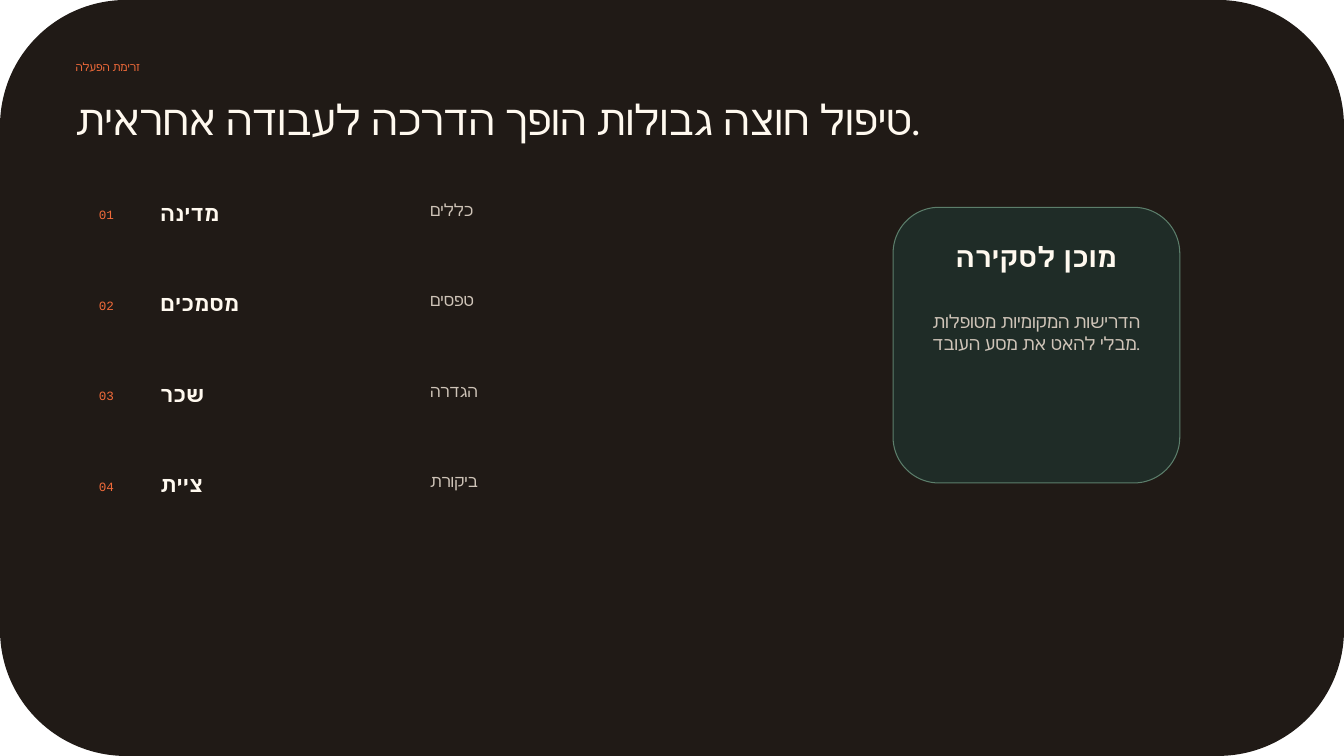
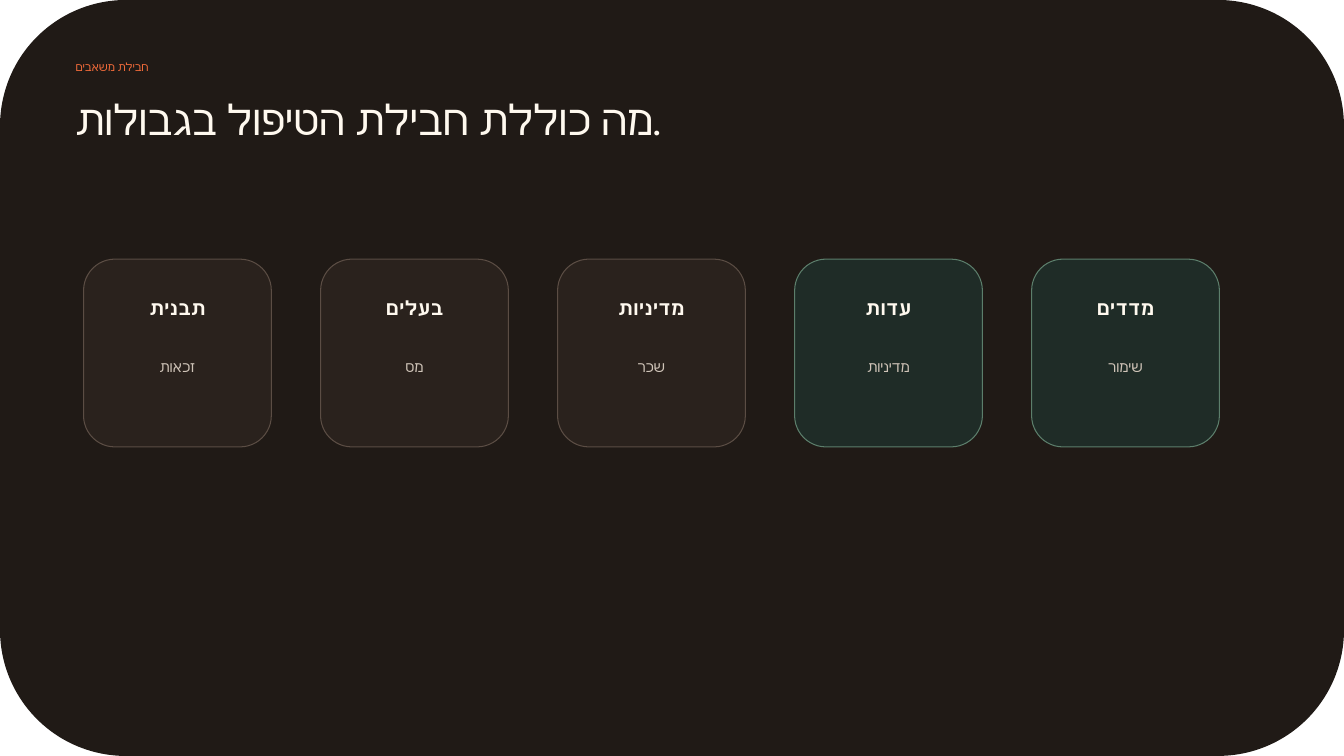
from pptx import Presentation
from pptx.dml.color import RGBColor
from pptx.enum.shapes import MSO_SHAPE
from pptx.enum.text import PP_ALIGN
from pptx.util import Pt

ROUND = MSO_SHAPE.ROUNDED_RECTANGLE
LEFT, MID = PP_ALIGN.LEFT, PP_ALIGN.CENTER

HUES = {
    "ink": "201A16", "cream": "FFF9EF", "sand": "CFC4B8", "flame": "F26B3A",
    "brown": "2A221D", "edge": "5B4D44", "pine": "1F2C27", "sage": "5C7E6B",
}
LOOKS = {
    "label": ("flame", {"name": "Courier New", "size": Pt(8.2)}),
    "title": ("cream", {"name": "Karla", "size": Pt(30)}),
    "count": ("flame", {"name": "Courier New", "size": Pt(9)}),
    "step": ("cream", {"name": "Karla", "size": Pt(15.5), "bold": True}),
    "note": ("sand", {"name": "Karla", "size": Pt(12)}),
    "head": ("cream", {"name": "Karla", "size": Pt(20), "bold": True}),
    "body": ("sand", {"name": "Karla", "size": Pt(13)}),
    "name": ("cream", {"name": "Karla", "size": Pt(14), "bold": True}),
    "part": ("sand", {"name": "Karla", "size": Pt(10.5)}),
}


def add_text(slide, text, look, x, y, w, h, align=LEFT):
    frame = slide.shapes.add_textbox(Pt(x), Pt(y), Pt(w), Pt(h)).text_frame
    frame.word_wrap = True
    for side in ("left", "top", "right", "bottom"):
        setattr(frame, f"margin_{side}", 0)
    para = frame.paragraphs[0]
    para.alignment = align
    run = para.add_run()
    run.text = text
    hue, form = LOOKS[look]
    for key, value in form.items():
        setattr(run.font, key, value)
    run.font.color.rgb = RGBColor.from_string(HUES[hue])


def add_card(slide, x, y, w, h, fill, line=None):
    card = slide.shapes.add_shape(ROUND, Pt(x), Pt(y), Pt(w), Pt(h))
    card.shadow.inherit = False
    card.fill.solid()
    card.fill.fore_color.rgb = RGBColor.from_string(HUES[fill])
    if line:
        card.line.color.rgb = RGBColor.from_string(HUES[line])
        card.line.width = Pt(0.75)
    else:
        card.line.fill.background()


deck = Presentation()
deck.slide_width, deck.slide_height = Pt(960), Pt(540)

pages = []
for label, title, width in [
    ("זרימת הפעלה", "טיפול חוצה גבולות הופך הדרכה לעבודה אחראית.", 677.5),
    ("חבילת משאבים", "מה כוללת חבילת הטיפול בגבולות.", 598.3),
]:
    page = deck.slides.add_slide(deck.slide_layouts[6])
    add_card(page, 0, 0, 960, 540, "ink")
    add_text(page, label, "label", 54, 43.2, 330.5, 20)
    add_text(page, title, "title", 54, 67, width, 51)
    pages.append(page)
flow, kit = pages

steps = [("מדינה", "כללים"), ("מסמכים", "טפסים"), ("שכר", "הגדרה"), ("ציית", "ביקורת")]
for i, (step, note) in enumerate(steps):
    y = 142.5 + i * 64.6
    add_text(flow, f"{i + 1:02}", "count", 70.6, y + 5.6, 39.6, 17.3)
    add_text(flow, step, "step", 114.5, y, 204.5, 20)
    add_text(flow, note, "note", 307.2, y, 283.7, 22.3)

add_card(flow, 637.9, 148.1, 204.8, 196.9, "pine", "sage")
add_text(flow, "מוכן לסקירה", "head", 657.4, 171.4, 165.6, 33, MID)
add_text(flow, "הדרישות המקומיות מטופלות מבלי להאט את מסע העובד.", "body",
         657.4, 221.8, 165.6, 70.6, MID)

warm, cool = ("brown", "edge"), ("pine", "sage")
parts = [
    ("תבנית", "זכאות", warm),
    ("בעלים", "מס", warm),
    ("מדיניות", "שכר", warm),
    ("עדות", "מדיניות", cool),
    ("מדדים", "שימור", cool),
]
for i, (name, part, tone) in enumerate(parts):
    x = 59.7 + i * 169.3
    add_card(kit, x, 185.1, 134.1, 134.1, *tone)
    add_text(kit, name, "name", x + 13.4, 211, 107.3, 24, MID)
    add_text(kit, part, "part", x + 11.2, 255.6, 111.7, 41, MID)

deck.save("out.pptx")
